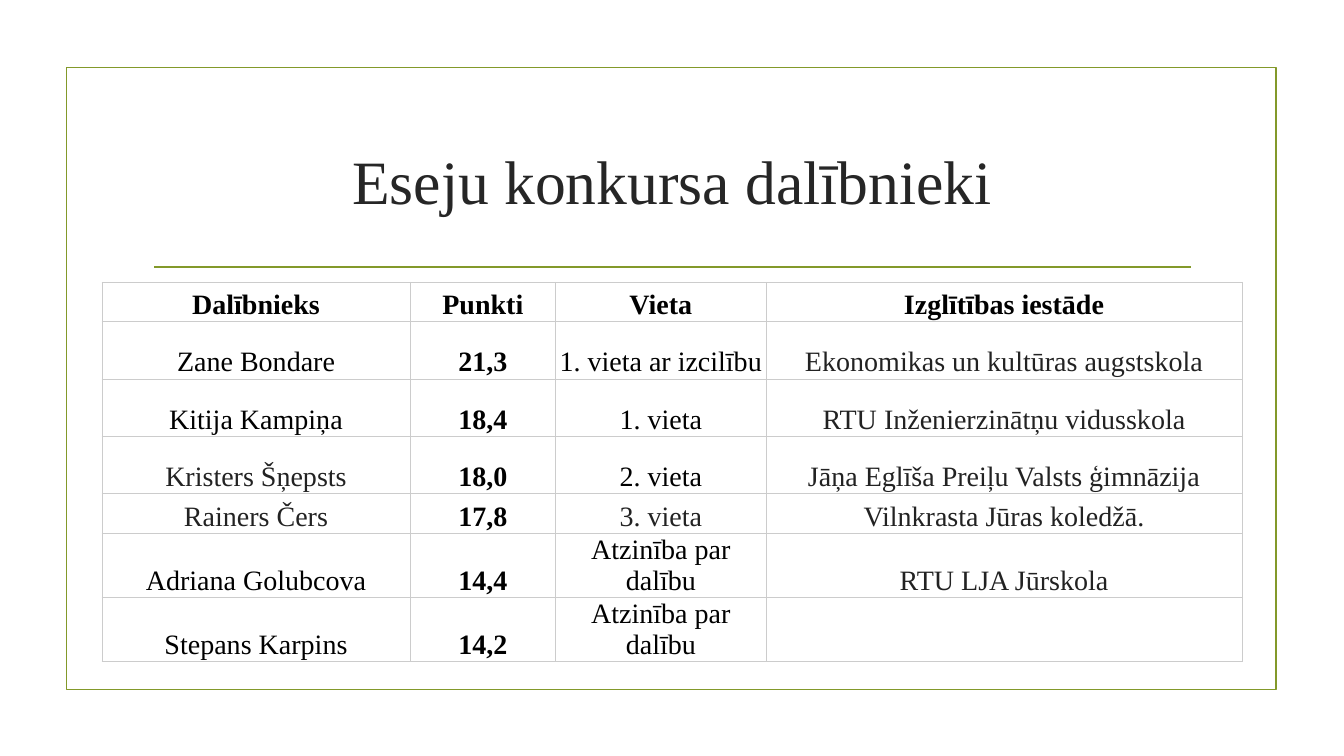
from dataclasses import dataclass

from lxml.etree import SubElement
from pptx import Presentation
from pptx.dml.color import RGBColor
from pptx.enum.shapes import MSO_CONNECTOR as Connector, MSO_SHAPE as Shape
from pptx.enum.text import MSO_ANCHOR as Anchor, PP_ALIGN as Align
from pptx.oxml.ns import qn
from pptx.util import Inches, Pt


@dataclass(frozen=True)
class Theme:
    """Colours, font and sizes of the slide."""
    font: str = "Times New Roman"
    title: str = "262626"
    ink: str = "000000"
    soft: str = "222222"
    accent: str = "83992A"
    grid: str = "CCCCCC"
    paper: str = "FFFFFF"
    title_size: int = 44
    cell_size: int = 20
    line_width: float = 1.25
    grid_width: float = 0.5


THEME = Theme()
COLUMNS = (3.06, 1.44, 2.09, 4.72)
ROW_HEIGHTS = (0.39, 0.57, 0.57, 0.57, 0.39, 0.57, 0.57)
POINTS_COLUMN, SCHOOL_COLUMN = 1, 3
SOFT_CELLS = {(3, 0), (4, 0), (4, 2)}
ENTRIES = (
    ("Dalībnieks", "Punkti", "Vieta", "Izglītības iestāde"),
    ("Zane Bondare", "21,3", "1. vieta ar izcilību", "Ekonomikas un kultūras augstskola"),
    ("Kitija Kampiņa", "18,4", "1. vieta", "RTU Inženierzinātņu vidusskola"),
    ("Kristers Šņepsts", "18,0", "2. vieta", "Jāņa Eglīša Preiļu Valsts ģimnāzija"),
    ("Rainers Čers", "17,8", "3. vieta", "Vilnkrasta Jūras koledžā."),
    ("Adriana Golubcova", "14,4", "Atzinība par dalību", "RTU LJA Jūrskola"),
    ("Stepans Karpins", "14,2", "Atzinība par dalību", ""),
)


def write_text(frame, text, *, size, color, bold=False):
    """Write one centred paragraph in the theme font."""
    para = frame.paragraphs[0]
    para.alignment = Align.CENTER
    para.font.size = Pt(size)
    if text:
        span = para.add_run()
        span.text = text
        span.font.name = THEME.font
        span.font.size = Pt(size)
        span.font.bold = bold
        span.font.color.rgb = RGBColor.from_string(color)


def style_line(line):
    """Give a line the accent colour and width."""
    line.color.rgb = RGBColor.from_string(THEME.accent)
    line.width = Pt(THEME.line_width)


def add_frame(slide, left, top, width, height):
    """Draw the outlined frame around the slide content."""
    frame = slide.shapes.add_shape(
        Shape.RECTANGLE, Inches(left), Inches(top), Inches(width), Inches(height))
    frame.shadow.inherit = False
    frame.fill.background()
    style_line(frame.line)


def add_rule(slide, left, right, top):
    """Draw the horizontal rule under the title."""
    rule = slide.shapes.add_connector(
        Connector.STRAIGHT, Inches(left), Inches(top), Inches(right), Inches(top))
    style_line(rule.line)
    SubElement(rule.element.spPr, qn("a:effectLst"))


def set_title(slide, text, left, top, width, height):
    """Place and format the title placeholder."""
    title = slide.shapes.title
    title.left, title.top = Inches(left), Inches(top)
    title.width, title.height = Inches(width), Inches(height)
    title.text_frame.word_wrap = True
    title.text_frame.vertical_anchor = Anchor.MIDDLE
    write_text(title.text_frame, text, size=THEME.title_size, color=THEME.title)


def add_borders(cell):
    """Draw a thin border on all four sides of a cell."""
    properties = cell._tc.get_or_add_tcPr()
    for side in ("a:lnL", "a:lnR", "a:lnT", "a:lnB"):
        border = SubElement(properties, qn(side), w=str(Pt(THEME.grid_width)))
        fill = SubElement(border, qn("a:solidFill"))
        SubElement(fill, qn("a:srgbClr"), val=THEME.grid)


def format_cell(cell, text, *, color, bold):
    """Fill one cell with text, borders and a background."""
    cell.margin_left = cell.margin_right = Inches(0.01)
    cell.margin_top = cell.margin_bottom = Inches(0.01)
    cell.vertical_anchor = Anchor.BOTTOM
    add_borders(cell)
    if text and color == THEME.soft:
        cell.fill.solid()
        cell.fill.fore_color.rgb = RGBColor.from_string(THEME.paper)
    else:
        cell.fill.background()
    write_text(cell.text_frame, text, size=THEME.cell_size, color=color, bold=bold)


def add_results(slide, left, top):
    """Add the table of contest participants."""
    table = slide.shapes.add_table(
        len(ENTRIES), len(COLUMNS), Inches(left), Inches(top),
        Inches(sum(COLUMNS)), Inches(sum(ROW_HEIGHTS))).table
    table.first_row = table.horz_banding = False
    for column, width in zip(table.columns, COLUMNS):
        column.width = Inches(width)
    for row, height in zip(table.rows, ROW_HEIGHTS):
        row.height = Inches(height)
    for row, entry in enumerate(ENTRIES):
        for column, text in enumerate(entry):
            header = row == 0
            soft = (row, column) in SOFT_CELLS or (column == SCHOOL_COLUMN and not header)
            format_cell(table.cell(row, column), text,
                        color=THEME.soft if soft else THEME.ink,
                        bold=header or column == POINTS_COLUMN)


def main():
    """Build the slide and save the deck."""
    deck = Presentation()
    deck.slide_width, deck.slide_height = Inches(13.33), Inches(7.5)
    slide = deck.slides.add_slide(deck.slide_layouts.get_by_name("Title Only"))
    slide.background.fill.solid()
    slide.background.fill.fore_color.rgb = RGBColor.from_string(THEME.paper)
    add_frame(slide, 0.66, 0.67, 12, 6.17)
    add_rule(slide, 1.53, 11.81, 2.65)
    set_title(slide, "Eseju konkursa dalībnieki", 1.42, 1.07, 10.5, 1.43)
    add_results(slide, 1.01, 2.8)
    deck.save("out.pptx")


if __name__ == "__main__":
    main()
